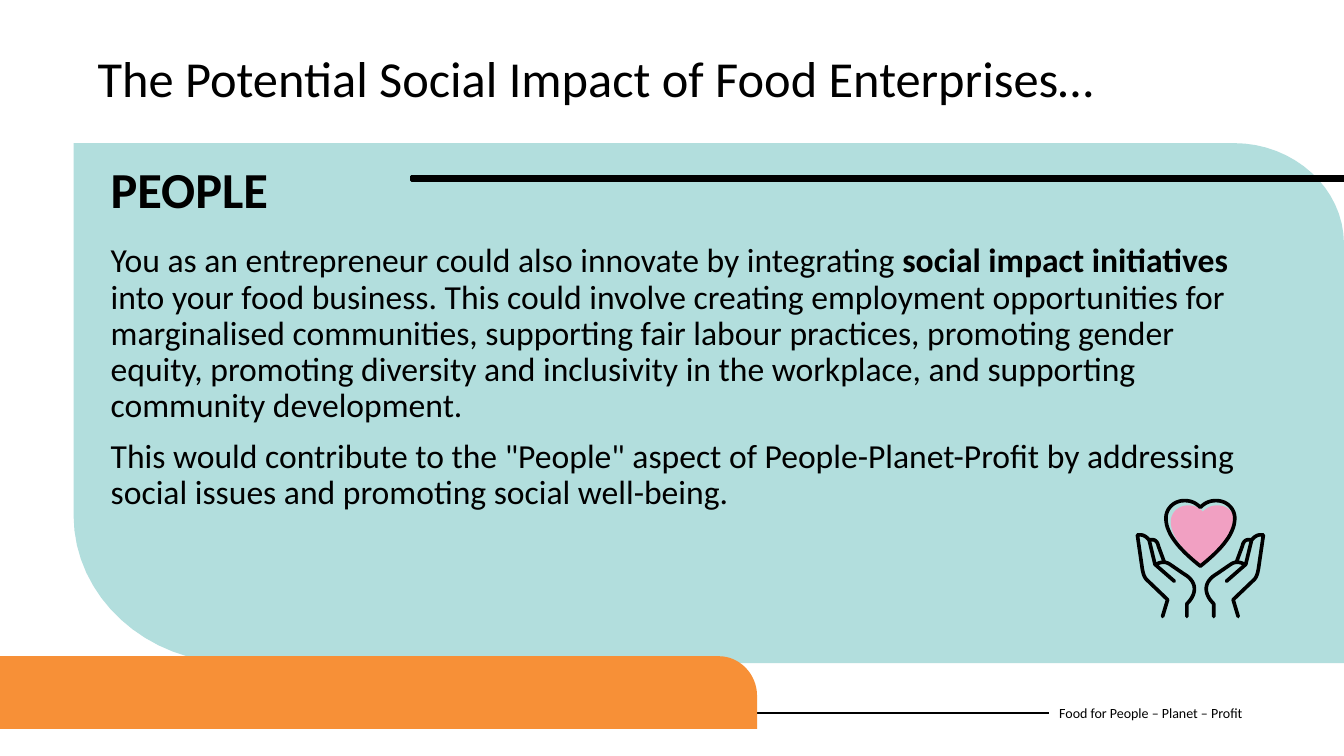
from lxml.etree import SubElement
from pptx import Presentation
from pptx.dml.color import RGBColor
from pptx.enum.shapes import MSO_CONNECTOR as Link, MSO_SHAPE as Kind
from pptx.enum.text import MSO_ANCHOR as Anchor
from pptx.oxml.ns import qn
from pptx.util import Inches, Pt

COLS, ROWS = 160, 90
BLACK, TEAL, ORANGE, PINK = "000000", "B2DEDD", "F79037", "F1A0C2"


def tint(code):
    return RGBColor.from_string(code)


def trace(start, *steps):
    """Turn steps of 2 numbers (line) or 6 (cubic curve) into points."""
    points = [start]
    for step in steps:
        if len(step) == 2:
            points.append(step)
            continue
        knots = [points[-1], step[:2], step[2:4], step[4:]]
        for i in range(1, 17):
            t = i / 16
            blend = ((1 - t) ** 3, 3 * t * (1 - t) ** 2,
                     3 * t * t * (1 - t), t ** 3)
            points.append(tuple(sum(b * k[axis] for b, k in zip(blend, knots))
                                for axis in (0, 1)))
    return points


def move(points, mid, scale=1, base=0):
    """Scale points towards the height base and set their axis at mid."""
    return [(mid + x * scale, base + (y - base) * scale) for x, y in points]


class Page:
    """A slide on a grid of 160 columns and 90 rows, with one text style."""
    font = "Calibri"
    ink = BLACK

    def __init__(self, deck):
        self.slide = deck.slides.add_slide(deck.slide_layouts[6])
        self.shapes = self.slide.shapes
        self.col = deck.slide_width / COLS
        self.row = deck.slide_height / ROWS

    def spot(self, x, y):
        return round(x * self.col), round(y * self.row)

    def paint(self, shape, fill, width):
        shape.shadow.inherit = False
        if fill:
            shape.fill.solid()
            shape.fill.fore_color.rgb = tint(fill)
        else:
            shape.fill.background()
        if width:
            shape.line.color.rgb = tint(self.ink)
            shape.line.width = Pt(width)
            shape.element.spPr.find(qn("a:ln")).set("cap", "rnd")
        else:
            shape.line.fill.background()

    def text(self, x, y, w, h, paras, size, bold=False, anchor=Anchor.TOP,
             lead=None, gap=None):
        """Each paragraph is a list of (words, bold) runs or plain words."""
        box = self.shapes.add_textbox(*self.spot(x, y), *self.spot(w, h))
        frame = box.text_frame
        frame.word_wrap = True
        frame.vertical_anchor = anchor
        for i, runs in enumerate(paras):
            para = frame.add_paragraph() if i else frame.paragraphs[0]
            para.font.name, para.font.size = self.font, Pt(size)
            para.font.color.rgb = tint(self.ink)
            para.font.bold = bold
            if lead:
                para.line_spacing = lead
            if gap:
                para.space_before = Pt(gap)
            for words, strong in [(runs, None)] if isinstance(runs, str) else runs:
                run = para.add_run()
                run.text = words
                if strong:
                    run.font.bold = True
        return box

    def outline(self, points, fill=None, width=0, close=True):
        first, *rest = [self.spot(*p) for p in points]
        pen = self.shapes.build_freeform(*first)
        pen.add_line_segments(rest, close=close)
        self.paint(pen.convert_to_shape(), fill, width)

    def bar(self, x, y, w, h, width):
        shape = self.shapes.add_shape(Kind.RECTANGLE, *self.spot(x, y),
                                      *self.spot(w, h))
        self.paint(shape, self.ink, width)

    def rule(self, x, y, box, width):
        """Draw a line from a point to the left side of a box."""
        line = self.shapes.add_connector(Link.STRAIGHT, *self.spot(x, y),
                                         *self.spot(x, y))
        line.end_connect(box, 1)
        line.line.color.rgb = tint(self.ink)
        line.line.width = Pt(width)
        SubElement(line._element.spPr, qn("a:effectLst"))

    def icon(self, mid, width):
        """Draw a heart between two mirrored hands."""
        half = trace((0, 60.4), (0.6, 59.8, 1.2, 59.6, 1.9, 59.6),
                     (3.1, 59.6, 4.1, 60.5, 4.1, 61.7),
                     (4.1, 63.8, 2, 65.8, 0, 67.4))
        heart = half + [(-x, y) for x, y in half[-2:0:-1]]
        palm = trace((4.5, 73.4), (3.9, 71.4), (6.2, 69.2),
                     (6.7, 68.8, 6.8, 68.3, 6.9, 67.8), (7.5, 63.7),
                     (6.9, 63.6, 6.5, 63.8, 6.1, 64.3), (5.4, 67.2), (3.1, 69.2))
        finger = trace((6.1, 64.3), (5.4, 64.1, 5.1, 64.5, 5, 65), (4.3, 66.9))
        thumb = trace((1.6, 73.4), (1.6, 71.9), (0.3, 70.6, 0.4, 69.2, 2, 68.3),
                      (3.6, 67.2), (4.2, 66.8, 4.7, 66.9, 5.3, 67.2))
        self.outline(move(heart, mid + 0.3, 0.93, 67.6), PINK)
        for side in (1, -1):
            for part in (palm, finger, thumb):
                hand = [(side * x, y) for x, y in part]
                self.outline(move(hand, mid), width=width, close=False)
        self.outline(move(heart, mid), width=width)


def main():
    deck = Presentation()
    deck.slide_width, deck.slide_height = Inches(13.33), Inches(7.5)
    page = Page(deck)

    footer = page.text(124.92, 82.44, 32.76, 4.8,
                       ["Food for People – Planet – Profit"], 10,
                       anchor=Anchor.MIDDLE)
    page.rule(0, 84.84, footer, 1.5)
    page.outline(trace((8.76, 17.04), (146.88, 17.04),
                       (154.08, 17.04, 160, 22.44, 160, 29.04),
                       (160, 78.96), (28.08, 78.96),
                       (17.4, 78.96, 8.76, 71.04, 8.76, 61.32)), TEAL)
    page.outline(trace((0, 86.76), (0, 78.12), (85.56, 78.12),
                       (88.08, 78.12, 90.12, 80.28, 90.12, 82.8),
                       (90.12, 86.76)), ORANGE)
    page.bar(48.96, 21, 111.04, 0.48, 1.93)

    page.text(12, 28.44, 137.52, 45.12, [
        [("You as an entrepreneur could also innovate by integrating ", False),
         ("social impact initiatives ", True),
         ("into your food business. This could involve creating employment "
          "opportunities for marginalised communities, supporting fair labour "
          "practices, promoting gender equity, promoting diversity and "
          "inclusivity in the workplace, and supporting community "
          "development.", False)],
        "This would contribute to the \"People\" aspect of People-Planet-Profit "
        "by addressing social issues and promoting social well-being.",
    ], 24, lead=0.9, gap=10)
    page.text(10.44, 5.88, 139.08, 10.56,
              ["The Potential Social Impact of Food Enterprises…"], 36,
              lead=0.9, gap=10)
    page.icon(142.9, 2.6)
    page.text(12, 18.24, 32.04, 8.52, ["PEOPLE"], 36, bold=True)
    deck.save("out.pptx")


if __name__ == "__main__":
    main()
